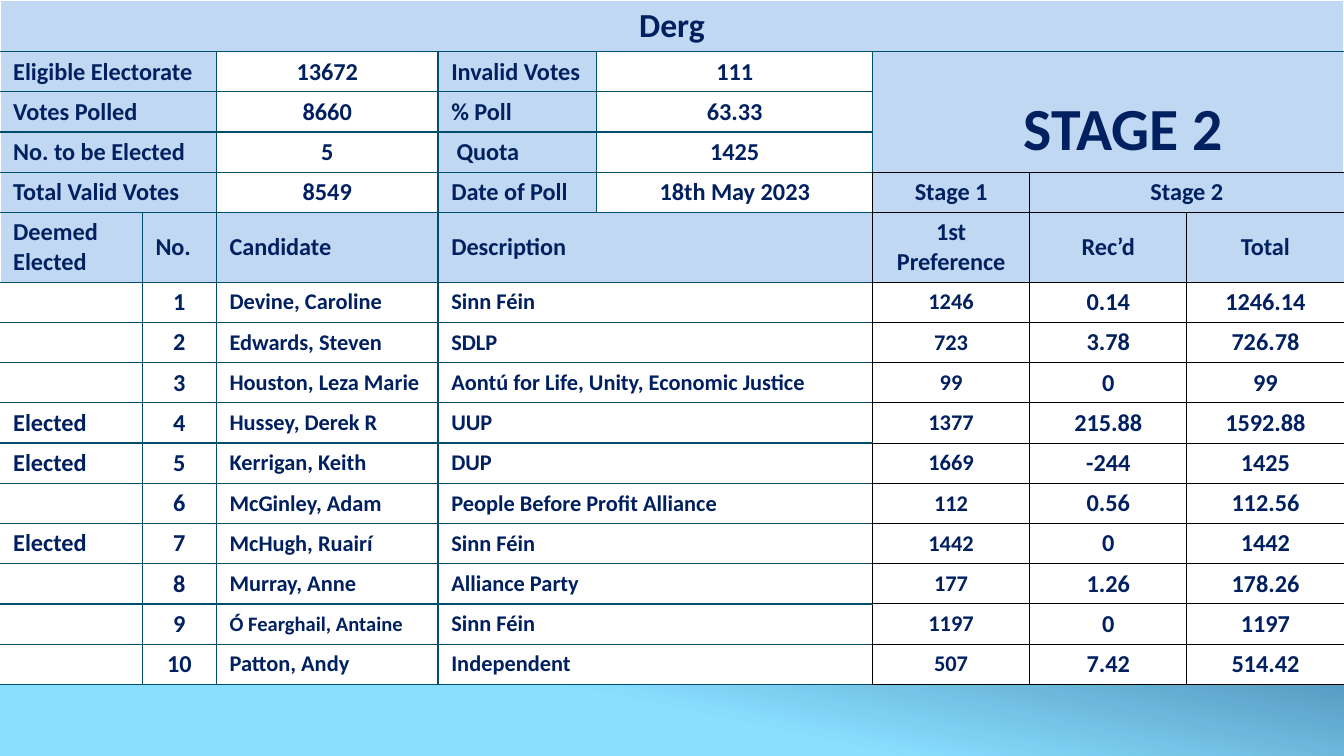
from lxml.etree import SubElement
from pptx import Presentation
from pptx.dml.color import RGBColor
from pptx.enum.text import MSO_ANCHOR, PP_ALIGN
from pptx.oxml.ns import qn
from pptx.util import Cm, Pt

COLORS = {
    "navy": "002060", "pale": "C1D8F2", "white": "FFFFFF", "teal": "004E6C",
    "black": "000000", "sky_dark": "0D3868", "sky_light": "8ADFFF",
}
FONT = "Calibri"
WHITE_LINE, TEAL_LINE, BLACK_LINE = ("white", 1), ("teal", 0.75), ("black", 0.5)

COLUMN_WIDTHS = [2.69, 1.4, 4.19, 3.0, 5.21, 2.97, 2.97, 2.97]
TITLE_HEIGHT, ROW_HEIGHT, HEADING_HEIGHT = 0.94, 0.71, 1.22
FIRST_STAGE_COLUMN, HEADING_ROW = 5, 5

SUMMARY = [
    ("Eligible Electorate", "13672", "Invalid Votes", "111"),
    ("Votes Polled", "8660", "% Poll", "63.33"),
    ("No. to be Elected", "5", "Quota", "1425"),
    ("Total Valid Votes", "8549", "Date of Poll", "18th May 2023"),
]
HEADINGS = ("Deemed Elected", "No.", "Candidate", "Description",
            "1st Preference", "Rec’d", "Total")
# Elected, candidate, description, first preference, received, total
CANDIDATES = [
    ("", "Devine, Caroline", "Sinn Féin", "1246", "0.14", "1246.14"),
    ("", "Edwards, Steven", "SDLP", "723", "3.78", "726.78"),
    ("", "Houston, Leza Marie", "Aontú for Life, Unity, Economic Justice", "99", "0", "99"),
    ("Elected", "Hussey, Derek R", "UUP", "1377", "215.88", "1592.88"),
    ("Elected", "Kerrigan, Keith", "DUP", "1669", "-244", "1425"),
    ("", "McGinley, Adam", "People Before Profit Alliance", "112", "0.56", "112.56"),
    ("Elected", "McHugh, Ruairí", "Sinn Féin", "1442", "0", "1442"),
    ("", "Murray, Anne", "Alliance Party", "177", "1.26", "178.26"),
    ("", "Ó Fearghail, Antaine", "Sinn Féin", "1197", "0", "1197"),
    ("", "Patton, Andy", "Independent", "507", "7.42", "514.42"),
]
# Columns where headings and candidate entries start
ENTRY_COLUMNS = (0, 1, 2, 3, 5, 6, 7)
CENTERED_COLUMNS = (1, 5, 6, 7)
SMALL_COLUMNS = (2, 3, 5)


def color(name):
    return RGBColor.from_string(COLORS[name])


def set_borders(cell, left, top, right, bottom):
    properties = cell._tc.get_or_add_tcPr()
    sides = zip(("a:lnL", "a:lnR", "a:lnT", "a:lnB"), (left, right, top, bottom))
    for position, (tag, (name, width)) in enumerate(sides):
        line = SubElement(properties, qn(tag), w=str(Pt(width)))
        properties.insert(position, line)
        fill = SubElement(line, qn("a:solidFill"))
        SubElement(fill, qn("a:srgbClr"), val=COLORS[name])


def borders_for(row, column, last_column):
    """Lines are black among the stage columns and teal elsewhere."""
    if row == 0:
        return WHITE_LINE, WHITE_LINE, WHITE_LINE, TEAL_LINE
    if column >= FIRST_STAGE_COLUMN:
        if row == 1:
            return TEAL_LINE, TEAL_LINE, WHITE_LINE, BLACK_LINE
        return (BLACK_LINE,) * 4
    left = WHITE_LINE if column == 0 else TEAL_LINE
    beside_stages = last_column == FIRST_STAGE_COLUMN - 1 and row >= HEADING_ROW - 1
    return left, TEAL_LINE, BLACK_LINE if beside_stages else TEAL_LINE, TEAL_LINE


def fill_cell(table, row, column, text, fill="white", size=13, centered=False,
              rows=1, columns=1):
    cell = table.cell(row, column)
    last_column = column + columns - 1
    if rows > 1 or columns > 1:
        cell.merge(table.cell(row + rows - 1, last_column))
    cell.fill.solid()
    cell.fill.fore_color.rgb = color(fill)
    set_borders(cell, *borders_for(row, column, last_column))
    cell.vertical_anchor = MSO_ANCHOR.MIDDLE
    cell.margin_left = cell.margin_right = Cm(0.25)
    cell.margin_top = cell.margin_bottom = Cm(0.1)
    para = cell.text_frame.paragraphs[0]
    para.text = text
    para.alignment = PP_ALIGN.CENTER if centered else PP_ALIGN.LEFT
    for span in para.runs:
        span.font.name = FONT
        span.font.size = Pt(size)
        span.font.bold = True
        span.font.color.rgb = color("navy")
    if not text:  # keeps an empty cell from stretching its row
        SubElement(para._p, qn("a:endParaRPr"), sz=str(size * 100))
    return cell


def add_summary(table):
    fill_cell(table, 0, 0, "Derg", "pale", 18, True, columns=len(COLUMN_WIDTHS))
    for row, (label, value, second_label, second_value) in enumerate(SUMMARY, 1):
        fill_cell(table, row, 0, label, "pale", columns=2)
        fill_cell(table, row, 2, value, centered=True)
        label_cell = fill_cell(table, row, 3, second_label, "pale")
        if second_label == "Quota":
            label_cell.margin_left = Cm(0.35)
        fill_cell(table, row, 4, second_value, centered=True)

    # Stage banner and stage labels
    banner = fill_cell(table, 1, FIRST_STAGE_COLUMN, "STAGE 2", "pale", 32, True,
                       rows=3, columns=3)
    banner.vertical_anchor = MSO_ANCHOR.BOTTOM
    banner.margin_left = Cm(0.82)
    fill_cell(table, 4, 5, "Stage 1", "pale", centered=True)
    fill_cell(table, 4, 6, "Stage 2", "pale", centered=True, columns=2)


def add_candidates(table):
    for column, heading in zip(ENTRY_COLUMNS, HEADINGS):
        fill_cell(table, HEADING_ROW, column, heading, "pale",
                  centered=column >= FIRST_STAGE_COLUMN,
                  columns=2 if column == 3 else 1)
    for number, (elected, *details) in enumerate(CANDIDATES, 1):
        for column, text in zip(ENTRY_COLUMNS, (elected, str(number), *details)):
            size = 12 if column in SMALL_COLUMNS else 13
            if text == "Ó Fearghail, Antaine":
                size = 11
            fill_cell(table, HEADING_ROW + number, column, text, size=size,
                      centered=column in CENTERED_COLUMNS,
                      columns=2 if column == 3 else 1)


def add_results_table(page, left, top, width, height):
    row_heights = ([TITLE_HEIGHT] + [ROW_HEIGHT] * len(SUMMARY) + [HEADING_HEIGHT]
                   + [ROW_HEIGHT] * len(CANDIDATES))
    table = page.shapes.add_table(len(row_heights), len(COLUMN_WIDTHS),
                                  left, top, width, height).table
    table.first_row = table.horz_banding = False
    for column, column_width in zip(table.columns, COLUMN_WIDTHS):
        column.width = Cm(column_width)
    for row, row_height in zip(table.rows, row_heights):
        row.height = Cm(row_height)
    add_summary(table)
    add_candidates(table)


def paint_background(page):
    fill = page.background.fill
    fill.gradient()
    fill.gradient_angle = 258
    stops = zip(fill.gradient_stops, (("sky_dark", 0.42), ("sky_light", 0.82)))
    for stop, (name, position) in stops:
        stop.color.rgb = color(name)
        stop.position = position


def main():
    deck = Presentation()
    deck.slide_width, deck.slide_height = Cm(25.4), Cm(14.29)
    page = deck.slides.add_slide(deck.slide_layouts[6])
    paint_background(page)
    add_results_table(page, Cm(0), Cm(0), deck.slide_width, Cm(12.62))
    deck.save("out.pptx")


if __name__ == "__main__":
    main()
